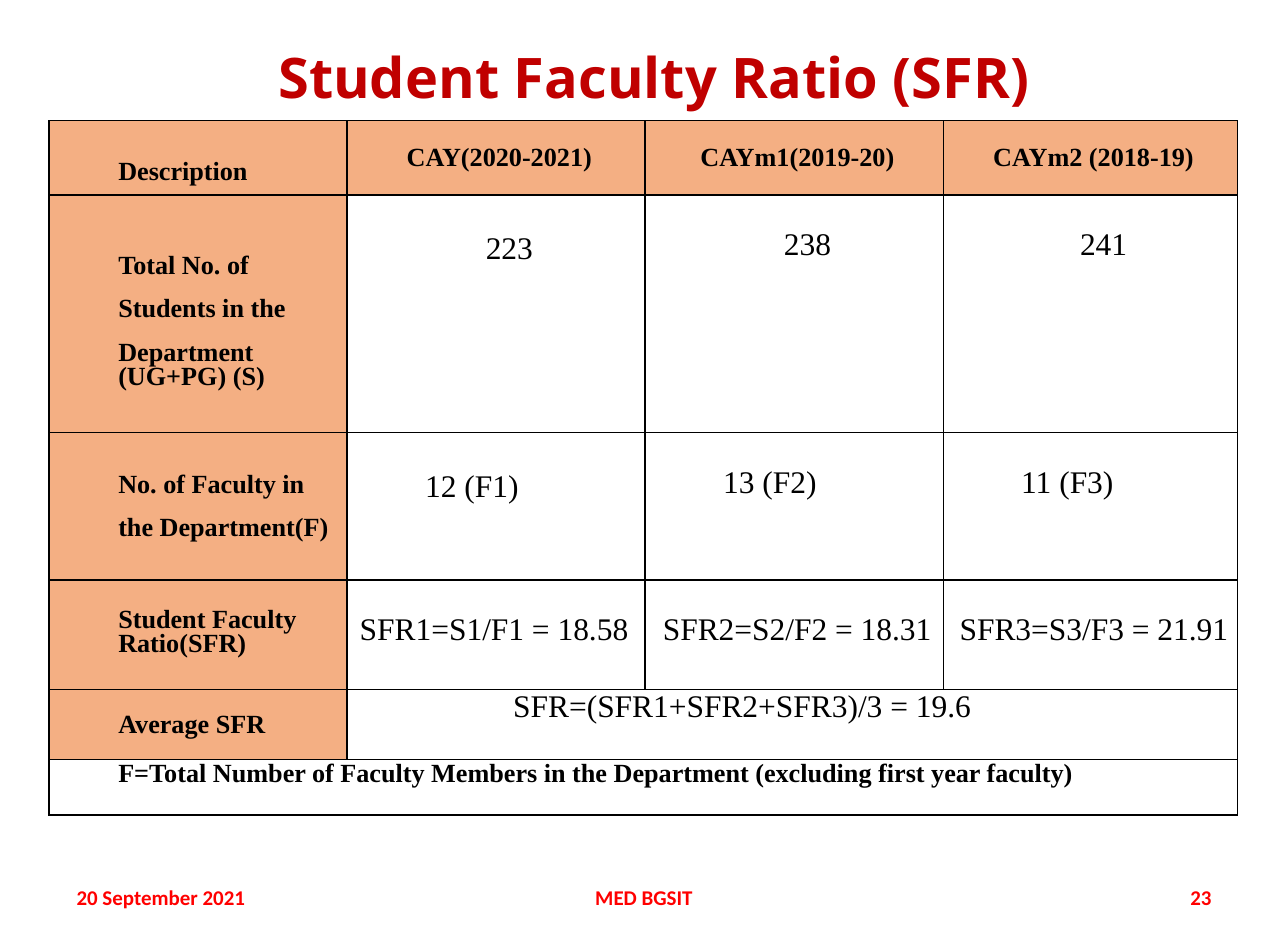
import pptx
import pptx.dml.color
import pptx.enum.text
import pptx.oxml
import pptx.oxml.ns
import pptx.util

Inches = pptx.util.Inches
Pt = pptx.util.Pt
ALIGN = pptx.enum.text.PP_ALIGN
ANCHOR = pptx.enum.text.MSO_ANCHOR
COLORS = {"title": "C00000", "foot": "FF0000", "ink": "000000", "head": "F4AF83"}
FONTS = {
    "title": {"name": "Noto Sans", "size": Pt(32), "bold": True},
    "foot": {"name": "Calibri", "size": Pt(12), "bold": True},
    "label": {"name": "Times New Roman", "size": Pt(15), "bold": True},
    "value": {"name": "Times New Roman", "size": Pt(18), "bold": False},
}


class Deck:
    """Holds the style and the current slide, and draws each kind of element."""

    def __init__(self, width, height):
        self.show = pptx.Presentation()
        self.show.slide_width, self.show.slide_height = Inches(width), Inches(height)
        self.slide = self.show.slides.add_slide(self.show.slide_layouts[6])

    def color(self, name):
        return pptx.dml.color.RGBColor.from_string(COLORS[name])

    def line(self, para, text, font, color, indent=0, **form):
        if indent:
            para._p.get_or_add_pPr().set("marL", str(Inches(indent)))
        for key, value in form.items():
            setattr(para, key, value)
        run = para.add_run()
        run.text = text
        for key, value in FONTS[font].items():
            setattr(run.font, key, value)
        run.font.color.rgb = self.color(color)

    def text(self, box, text, style, anchor=ANCHOR.MIDDLE, **form):
        frame = self.slide.shapes.add_textbox(*map(Inches, box)).text_frame
        frame.word_wrap = True
        frame.vertical_anchor = anchor
        self.line(frame.paragraphs[0], text, style, style, **form)

    def table(self, left, top, widths, heights):
        size = left, top, sum(widths), sum(heights)
        grid = self.slide.shapes.add_table(len(heights), len(widths), *map(Inches, size)).table
        grid.first_row = grid.horz_banding = False
        for items, key, sizes in ((grid.columns, "width", widths), (grid.rows, "height", heights)):
            for item, size in zip(items, sizes):
                setattr(item, key, Inches(size))
        for cell in grid.iter_cells():
            self.border(cell)
            cell.fill.background()
        return grid

    def border(self, cell):
        for side in "LRTB":
            cell._tc.get_or_add_tcPr().append(pptx.oxml.parse_xml(
                f'<a:ln{side} {pptx.oxml.ns.nsdecls("a")} w="12700"><a:solidFill>'
                f'<a:srgbClr val="{COLORS["ink"]}"/></a:solidFill></a:ln{side}>'))

    def cell(self, cell, lines, font, top=0, fill=None, anchor=ANCHOR.TOP, **form):
        edges = {"margin_left": 0, "margin_right": 0, "margin_top": Inches(top),
                 "margin_bottom": 0, "vertical_anchor": anchor}
        for key, value in edges.items():
            setattr(cell, key, value)
        if fill:
            cell.fill.solid()
            cell.fill.fore_color.rgb = self.color(fill)
        frame = cell.text_frame
        for row, (text, extra) in enumerate(lines):
            para = frame.add_paragraph() if row else frame.paragraphs[0]
            self.line(para, text, font, "ink", **form, **extra)


def main():
    deck = Deck(10.24, 7.48)
    deck.text((0.17, 0.02, 10.06, 0.79), "Student Faculty Ratio (SFR)", "title",
              ANCHOR.TOP, alignment=ALIGN.CENTER, line_spacing=1.5)
    feet = ((0.51, 2.39, "20 September 2021", ALIGN.LEFT),
            (3.5, 3.24, "MED BGSIT", ALIGN.CENTER),
            (7.34, 2.39, "23", ALIGN.RIGHT))
    for left, width, text, align in feet:
        deck.text((left, 6.93, width, 0.4), text, "foot", alignment=align)

    grid = deck.table(0.39, 0.96, (2.37, 2.37, 2.37, 2.34), (0.59, 1.89, 1.17, 0.87, 0.56, 0.44))
    grid.cell(4, 1).merge(grid.cell(4, 3))
    grid.cell(5, 0).merge(grid.cell(5, 3))

    labels = (
        [("Description", {})],
        [("Total No. of Students in the Department", {"line_spacing": 1.5}),
         ("(UG+PG) (S)", {"line_spacing": Pt(13.8)})],
        [("No. of Faculty in", {}), ("the Department(F)", {"space_before": Pt(7.8)})],
        [("Student Faculty", {"line_spacing": Pt(12.8)}),
         ("Ratio(SFR)", {"line_spacing": Pt(13.7)})],
        [("Average SFR", {})],
    )
    for row, lines in enumerate(labels):
        place = {"anchor": ANCHOR.MIDDLE} if row else {"top": 0.29}
        deck.cell(grid.cell(row, 0), lines, "label", fill="head", indent=0.55, **place)

    years = "CAY(2020-2021)", "CAYm1(2019-20)", "CAYm2 (2018-19)"
    for col, year in enumerate(years, 1):
        deck.cell(grid.cell(0, col), [(year, {})], "label", fill="head",
                  anchor=ANCHOR.MIDDLE, indent=0.05, alignment=ALIGN.CENTER)

    values = (
        (("223", "238", "241"), (0.29, 0.26, 0.26), (0.21,) * 3, ALIGN.CENTER),
        (("12 (F1)", "13 (F2)", "11 (F3)"), (0.29, 0.26, 0.26), (0.62,) * 3, ALIGN.LEFT),
        (("SFR1=S1/F1 = 18.58", "SFR2=S2/F2 = 18.31", "SFR3=S3/F3 = 21.91"),
         (0.26,) * 3, (0.1, 0.14, 0.13), ALIGN.LEFT),
    )
    for row, (texts, tops, indents, align) in enumerate(values, 1):
        for col, (text, top, indent) in enumerate(zip(texts, tops, indents), 1):
            deck.cell(grid.cell(row, col), [(text, {})], "value", top,
                      indent=indent, alignment=align)

    deck.cell(grid.cell(4, 1), [("SFR=(SFR1+SFR2+SFR3)/3 = 19.6", {})], "value", indent=1.32)
    note = "F=Total Number of Faculty Members in the Department (excluding first year faculty)"
    deck.cell(grid.cell(5, 0), [(note, {})], "label", indent=0.55)
    deck.show.save("out.pptx")


if __name__ == "__main__":
    main()
